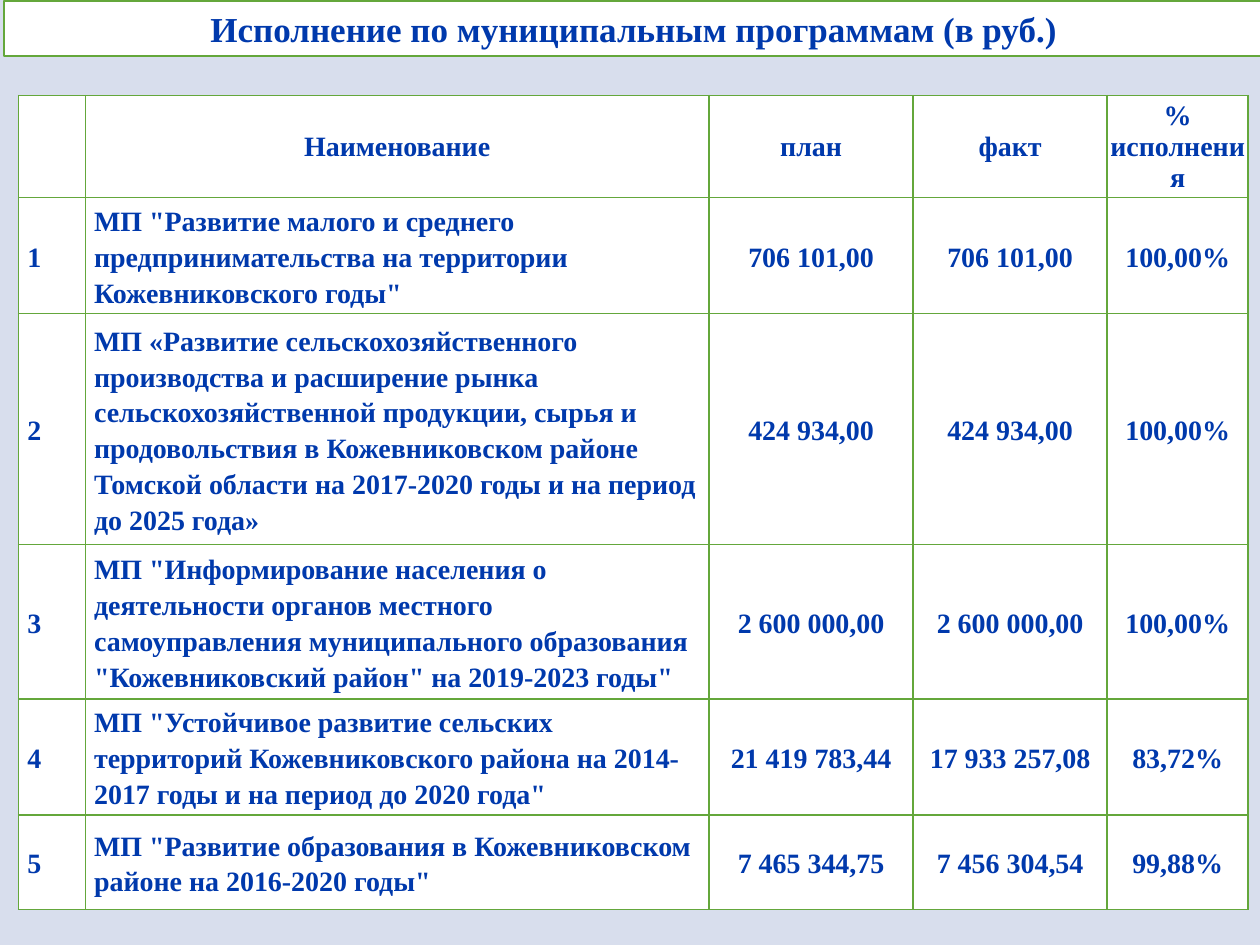
from lxml import etree
from pptx import Presentation
from pptx.dml.color import RGBColor
from pptx.enum.shapes import MSO_SHAPE
from pptx.enum.text import MSO_ANCHOR, PP_ALIGN
from pptx.oxml.ns import qn
from pptx.util import Pt

RECT = MSO_SHAPE.RECTANGLE
TOP, MIDDLE = MSO_ANCHOR.TOP, MSO_ANCHOR.MIDDLE
LEFT, CENTER = PP_ALIGN.LEFT, PP_ALIGN.CENTER

BACK = RGBColor(0xD8, 0xDE, 0xED)
WHITE = RGBColor(0xFF, 0xFF, 0xFF)
GREEN = RGBColor(0x64, 0xA7, 0x3B)
BLUE = RGBColor(0x00, 0x39, 0xAC)
FONT = "Times New Roman"

COLS = [38.2, 356.4, 116.6, 110.9, 80.6]
ROWS = [58.2, 66.2, 132, 88.4, 66.2, 54]
HEAD = ["", "Наименование", "план", "факт", "% исполнения"]
PLANS = [
    ('МП "Развитие малого и среднего предпринимательства на территории '
     'Кожевниковского годы"', "706 101,00", "706 101,00", "100,00%"),
    ("МП «Развитие сельскохозяйственного производства и расширение рынка "
     "сельскохозяйственной продукции, сырья и продовольствия в "
     "Кожевниковском районе Томской области на 2017-2020 годы и на период "
     "до 2025 года»", "424 934,00", "424 934,00", "100,00%"),
    ('МП "Информирование населения о деятельности органов местного '
     'самоуправления муниципального образования "Кожевниковский район" '
     'на 2019-2023 годы"', "2 600 000,00", "2 600 000,00", "100,00%"),
    ('МП "Устойчивое развитие сельских территорий Кожевниковского района '
     'на 2014-2017 годы и на период до 2020 года"',
     "21 419 783,44", "17 933 257,08", "83,72%"),
    ('МП "Развитие образования в Кожевниковском районе на 2016-2020 годы"',
     "7 465 344,75", "7 456 304,54", "99,88%"),
]


def write(frame, text, size, align):
    frame.text = text
    para = frame.paragraphs[0]
    para.alignment = align
    font = para.font
    font.name, font.size, font.bold = FONT, Pt(size), True
    font.color.rgb = BLUE
    return para


def add_title(slide, text):
    box = slide.shapes.add_shape(RECT, Pt(2.2), Pt(0.7), Pt(720), Pt(31.5))
    box.shadow.inherit = False
    box.fill.solid()
    box.fill.fore_color.rgb = WHITE
    box.line.color.rgb = GREEN
    box.line.width = Pt(1.25)
    box.text_frame.vertical_anchor = TOP
    write(box.text_frame, text, 20, CENTER)


def add_edges(cell):
    """Draw a thin green line on all four sides of the cell."""
    props = cell._tc.get_or_add_tcPr()
    for side in ("a:lnL", "a:lnR", "a:lnT", "a:lnB"):
        line = etree.SubElement(props, qn(side), w=str(Pt(1)))
        fill = etree.SubElement(line, qn("a:solidFill"))
        etree.SubElement(fill, qn("a:srgbClr"), val=str(GREEN))


def fill_cell(cell, text, align, head):
    add_edges(cell)
    cell.fill.solid()
    cell.fill.fore_color.rgb = WHITE
    cell.vertical_anchor = MIDDLE
    cell.margin_left = cell.margin_right = Pt(0.7 if head else 5)
    cell.margin_top = Pt(0.7 if head else 0)
    cell.margin_bottom = Pt(0)
    para = write(cell.text_frame, text, 16, align)
    if not head:
        para.line_spacing = 1.15


def add_grid(slide):
    data = [HEAD] + [(str(num), *plan) for num, plan in enumerate(PLANS, 1)]
    shape = slide.shapes.add_table(len(ROWS), len(COLS), Pt(10.6), Pt(54.7),
                                   Pt(sum(COLS)), Pt(sum(ROWS)))
    table = shape.table
    for col, width in zip(table.columns, COLS):
        col.width = Pt(width)
    for row, height in zip(table.rows, ROWS):
        row.height = Pt(height)
    for r, texts in enumerate(data):
        for c, text in enumerate(texts):
            head = r == 0
            align = CENTER if head or c > 1 else LEFT
            fill_cell(table.cell(r, c), text, align, head)


def main():
    deck = Presentation()
    deck.slide_width, deck.slide_height = Pt(720), Pt(540)
    slide = deck.slides.add_slide(deck.slide_layouts[6])
    slide.background.fill.solid()
    slide.background.fill.fore_color.rgb = BACK
    add_title(slide, "Исполнение по муниципальным программам (в руб.)")
    add_grid(slide)
    deck.save("out.pptx")


if __name__ == "__main__":
    main()
